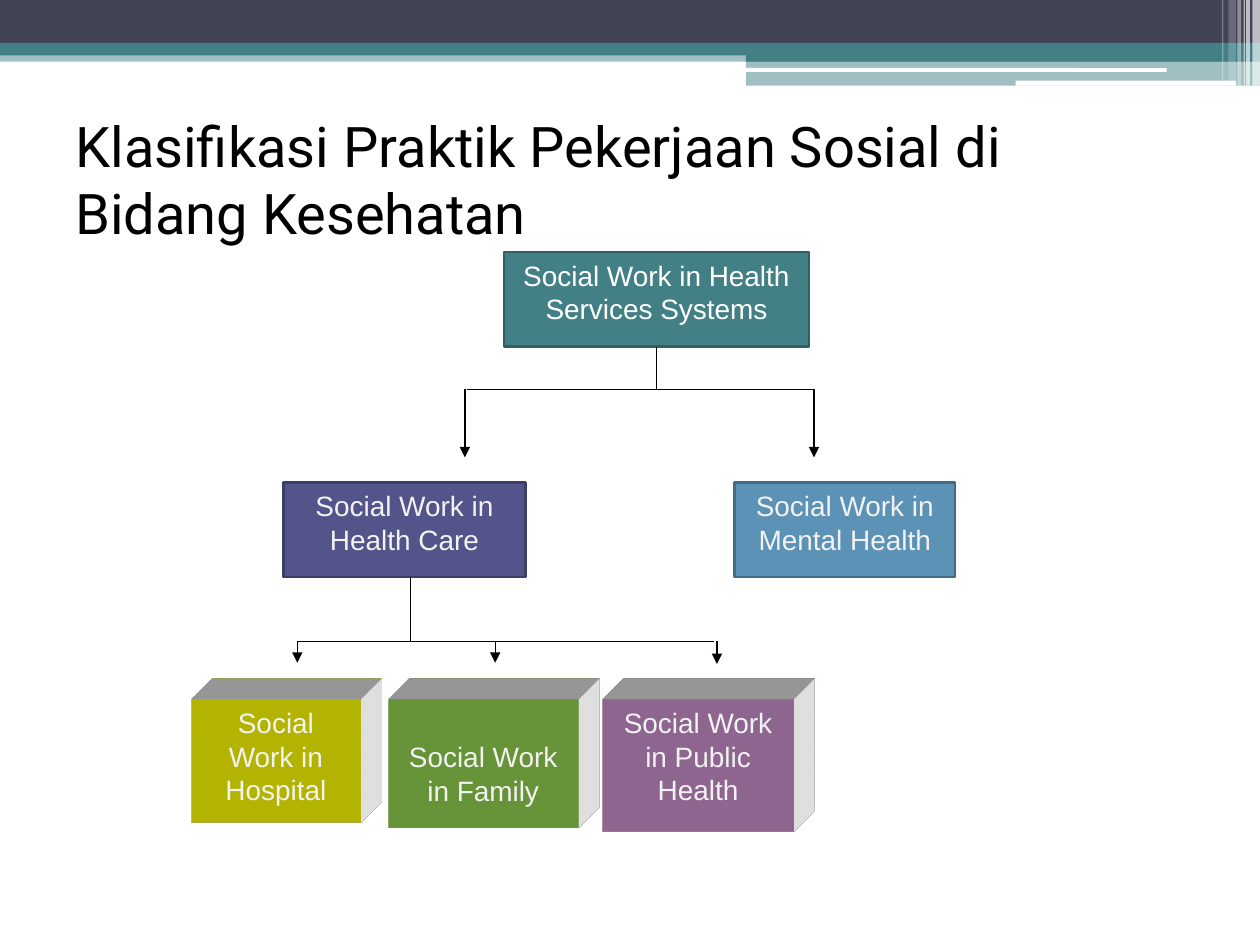
import pptx
import pptx.util
import pptx.dml.color
import pptx.enum.shapes
import pptx.enum.text
import pptx.oxml
import pptx.oxml.ns
from pptx.util import Inches

COLORS = {
    "navy": "424456", "teal": "438086", "white": "FFFFFF", "black": "000000",
    "pale": "F2F2F2", "teal edge": "325F63", "indigo": "53548A",
    "indigo edge": "3D3E66", "blue": "5C92B5", "blue edge": "446C86",
    "yellow": "FFFF00", "green": "92D050", "mauve": "C991CB",
}
SHAPES = pptx.enum.shapes.MSO_SHAPE
ALIGN = pptx.enum.text.PP_ALIGN
ANCHOR = pptx.enum.text.MSO_ANCHOR
NAMESPACE = pptx.oxml.ns.nsdecls("a")


def rgb(name):
    return pptx.dml.color.RGBColor.from_string(COLORS[name])


def add_block(place, fill, opacity=100, kind=SHAPES.RECTANGLE):
    """Add a filled shape without outline or shadow."""
    block = page.shapes.add_shape(kind, *map(Inches, place))
    block.shadow.inherit = False
    block.fill.solid()
    block.fill.fore_color.rgb = rgb(fill)
    block.line.fill.background()
    if opacity < 100:
        color = block.fill._xPr.find(".//" + pptx.oxml.ns.qn("a:srgbClr"))
        color.append(pptx.oxml.parse_xml(
            f'<a:alpha {NAMESPACE} val="{opacity * 1000}"/>'))
    return block


deck = pptx.Presentation()
deck.slide_width, deck.slide_height = Inches(10), Inches(7.5)
page = deck.slides.add_slide(deck.slide_layouts[6])

# Header bands
for place, fill, opacity in [
    ((0, 0.4, 10, 0.09), "teal", 50),
    ((0, 0, 10, 0.34), "navy", 100),
    ((0, 0.34, 10, 0.1), "teal", 100),
    ((5.92, 0.39, 4.08, 0.1), "teal", 100),
    ((5.92, 0.48, 4.08, 0.2), "teal", 50),
]:
    add_block(place, fill, opacity)
for place in [(5.91, 0.54, 3.35, 0.03), (8.06, 0.64, 1.75, 0.04)]:
    add_block(place, "white", kind=SHAPES.ROUNDED_RECTANGLE)

# Translucent stripes at the right end of the header
for left, width, height, opacity in [
    (9.94, 0.06, 0.68, 65), (9.89, 0.03, 0.68, 65), (9.87, 0.01, 0.68, 60),
    (9.82, 0.03, 0.68, 40), (9.75, 0.06, 0.64, 20), (9.7, 0.01, 0.64, 30),
]:
    add_block((left, 0, width, height), "white", opacity)

# Title
title = page.shapes.add_textbox(Inches(0.5), Inches(0.83), Inches(9), Inches(1.17))
title.text_frame.word_wrap = True
title.text_frame.vertical_anchor = ANCHOR.MIDDLE
title.text_frame.text = "Klasifikasi Praktik Pekerjaan Sosial di Bidang Kesehatan"
title_font = title.text_frame.paragraphs[0].runs[0].font
title_font.name, title_font.size = "Roboto", pptx.util.Pt(32)
title_font.color.rgb = rgb("black")

# Boxes of the chart: place, fill, edge (None for a solid block), text, top inset
boxes = []
for place, fill, edge, text_color, text, inset in [
    ((4, 2, 2.42, 0.75), "teal", "teal edge", "white",
     "Social Work in Health\nServices Systems", 0.05),
    ((2.25, 3.83, 1.92, 0.75), "indigo", "indigo edge", "pale",
     "Social Work in\nHealth Care", 0.05),
    ((5.83, 3.83, 1.75, 0.75), "blue", "blue edge", "pale",
     "Social Work in Mental Health", 0.05),
    ((1.52, 5.55, 1.34, 0.98), "yellow", None, "pale", "Social Work in Hospital", 0.05),
    ((3.08, 5.55, 1.51, 1.02), "green", None, "pale", "Social Work in Family", 0.32),
    ((4.78, 5.55, 1.52, 1.05), "mauve", None, "pale",
     "Social Work in Public Health", 0.05),
]:
    box = add_block(place, fill)
    boxes.append(box)
    if edge:
        box.line.color.rgb = rgb(edge)
        box.line.width = pptx.util.Pt(1.5)
    else:
        for xml in (
            f'<a:scene3d {NAMESPACE}><a:camera prst="legacyObliqueTopRight"/>'
            '<a:lightRig rig="legacyFlat3" dir="b"/></a:scene3d>',
            f'<a:sp3d {NAMESPACE} extrusionH="430200" prstMaterial="legacyMatte">'
            '<a:extrusionClr><a:srgbClr val="FFFFFF"/></a:extrusionClr></a:sp3d>',
        ):
            box._element.spPr.append(pptx.oxml.parse_xml(xml))
    frame = box.text_frame
    frame.word_wrap = True
    frame.vertical_anchor = ANCHOR.TOP
    frame.margin_top = Inches(inset)
    frame.text = text
    for paragraph in frame.paragraphs:
        paragraph.alignment = ALIGN.CENTER
        font = paragraph.runs[0].font
        font.name, font.size = "Arial", pptx.util.Pt(16)
        font.color.rgb = rgb(text_color)

# Branch lines: start, end, arrowhead, box the line leaves from
for start, end, arrow, source in [
    ((5.21, 2.75), (5.21, 3.09), False, boxes[0]),
    ((3.71, 3.09), (6.46, 3.09), False, None),
    ((3.69, 3.09), (3.69, 3.63), True, None),
    ((6.46, 3.09), (6.46, 3.63), True, None),
    ((3.26, 4.58), (3.26, 5.09), False, None),
    ((2.36, 5.09), (5.67, 5.09), False, None),
    ((2.36, 5.09), (2.36, 5.26), True, None),
    ((3.93, 5.09), (3.93, 5.26), True, None),
    ((5.69, 5.09), (5.69, 5.27), True, None),
]:
    line = page.shapes.add_connector(
        pptx.enum.shapes.MSO_CONNECTOR.STRAIGHT, *map(Inches, start + end))
    line.line.color.rgb = rgb("black")
    line.line.width = pptx.util.Pt(0.75)
    if source:
        line.begin_connect(source, 2)
    if arrow:
        line.line._get_or_add_ln().append(
            pptx.oxml.parse_xml(f'<a:tailEnd {NAMESPACE} type="triangle"/>'))
    line._element.spPr.append(pptx.oxml.parse_xml(f"<a:effectLst {NAMESPACE}/>"))

deck.save("out.pptx")
